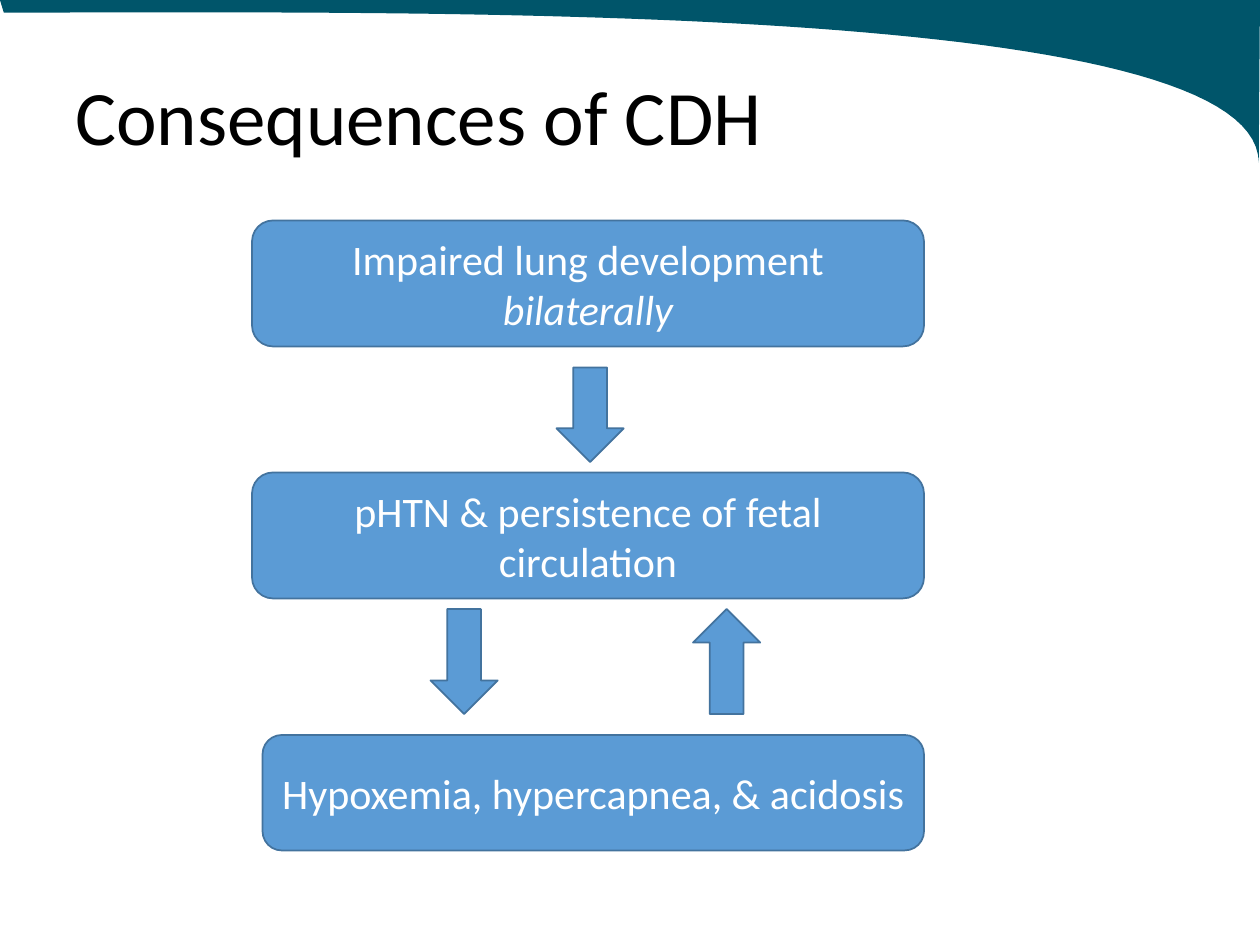
import dataclasses
import typing

import pptx
import pptx.dml.color
import pptx.enum.shapes
import pptx.enum.text
import pptx.util

Pt = pptx.util.Pt
Color = pptx.dml.color.RGBColor
Preset = pptx.enum.shapes.MSO_SHAPE
Align = pptx.enum.text.PP_ALIGN
Anchor = pptx.enum.text.MSO_ANCHOR


@dataclasses.dataclass(frozen=True)
class Theme:
    font: str = "Calibri"
    title_size: float = 44
    step_size: float = 24
    line_width: float = 1
    band: Color = Color(0x00, 0x55, 0x6A)
    fill: Color = Color(0x5B, 0x9B, 0xD5)
    outline: Color = Color(0x43, 0x73, 0x9E)
    title: Color = Color(0, 0, 0)
    step_text: Color = Color(0xFF, 0xFF, 0xFF)


class Words(typing.NamedTuple):
    text: str
    italic: bool = False


class Step(typing.NamedTuple):
    left: float
    top: float
    height: float
    words: list[Words]


class Arrow(typing.NamedTuple):
    preset: Preset
    left: float
    top: float
    height: float


class Point(typing.NamedTuple):
    x: float
    y: float


THEME = Theme()
SLIDE_WIDTH, SLIDE_HEIGHT = 720, 540
STEP_RIGHT = 528
ARROW_WIDTH = 38.4
CURVE_PIECES = 60
CURVE = [Point(719.3, 92.9), Point(718.6, 0), Point(241.9, 7.2), Point(2.2, 7.2)]

STEPS = [
    Step(144, 126, 72, [Words("Impaired lung development "), Words("bilaterally", True)]),
    Step(144, 270, 72, [Words("pHTN & persistence of fetal circulation")]),
    Step(150, 420, 66, [Words("Hypoxemia, hypercapnea, & acidosis")]),
]
ARROWS = [
    Arrow(Preset.DOWN_ARROW, 318, 210, 54),
    Arrow(Preset.DOWN_ARROW, 246, 348, 60),
    Arrow(Preset.UP_ARROW, 396, 348, 60),
]


def bezier(points: list[Point], t: float) -> Point:
    while len(points) > 1:
        points = [
            Point(a.x + (b.x - a.x) * t, a.y + (b.y - a.y) * t)
            for a, b in zip(points, points[1:])
        ]
    return points[0]


def draw_band(slide) -> None:
    edge = [bezier(CURVE, i / CURVE_PIECES) for i in range(CURVE_PIECES + 1)]
    outline = [Point(SLIDE_WIDTH, 0), *edge]
    builder = slide.shapes.build_freeform(0, 0)
    builder.add_line_segments([(Pt(p.x), Pt(p.y)) for p in outline], close=True)
    band = builder.convert_to_shape()
    band.shadow.inherit = False
    band.fill.solid()
    band.fill.fore_color.rgb = THEME.band
    band.line.fill.background()


def add_words(para, words: list[Words], size: float, color: Color) -> None:
    for piece in words:
        span = para.add_run()
        span.text = piece.text
        span.font.name = THEME.font
        span.font.size = Pt(size)
        span.font.color.rgb = color
        if piece.italic:
            span.font.italic = True


def draw_title(slide, text: str) -> None:
    box = slide.shapes.add_textbox(Pt(36), Pt(24), Pt(648), Pt(90))
    box.text_frame.word_wrap = True
    box.text_frame.vertical_anchor = Anchor.MIDDLE
    para = box.text_frame.paragraphs[0]
    para.line_spacing = 0.9
    add_words(para, [Words(text)], THEME.title_size, THEME.title)


def draw_shape(slide, preset: Preset, left: float, top: float, width: float, height: float):
    shape = slide.shapes.add_shape(preset, Pt(left), Pt(top), Pt(width), Pt(height))
    shape.shadow.inherit = False
    shape.fill.solid()
    shape.fill.fore_color.rgb = THEME.fill
    shape.line.color.rgb = THEME.outline
    shape.line.width = Pt(THEME.line_width)
    return shape


def draw_step(slide, step: Step) -> None:
    width = STEP_RIGHT - step.left
    box = draw_shape(slide, Preset.ROUNDED_RECTANGLE, step.left, step.top, width, step.height)
    box.text_frame.word_wrap = True
    box.text_frame.vertical_anchor = Anchor.MIDDLE
    para = box.text_frame.paragraphs[0]
    para.alignment = Align.CENTER
    add_words(para, step.words, THEME.step_size, THEME.step_text)


def main() -> None:
    deck = pptx.Presentation()
    deck.slide_width, deck.slide_height = Pt(SLIDE_WIDTH), Pt(SLIDE_HEIGHT)
    slide = deck.slides.add_slide(deck.slide_layouts[6])
    draw_band(slide)
    draw_title(slide, "Consequences of CDH")
    for step in STEPS:
        draw_step(slide, step)
    for arrow in ARROWS:
        draw_shape(slide, arrow.preset, arrow.left, arrow.top, ARROW_WIDTH, arrow.height)
    deck.save("out.pptx")


if __name__ == "__main__":
    main()
